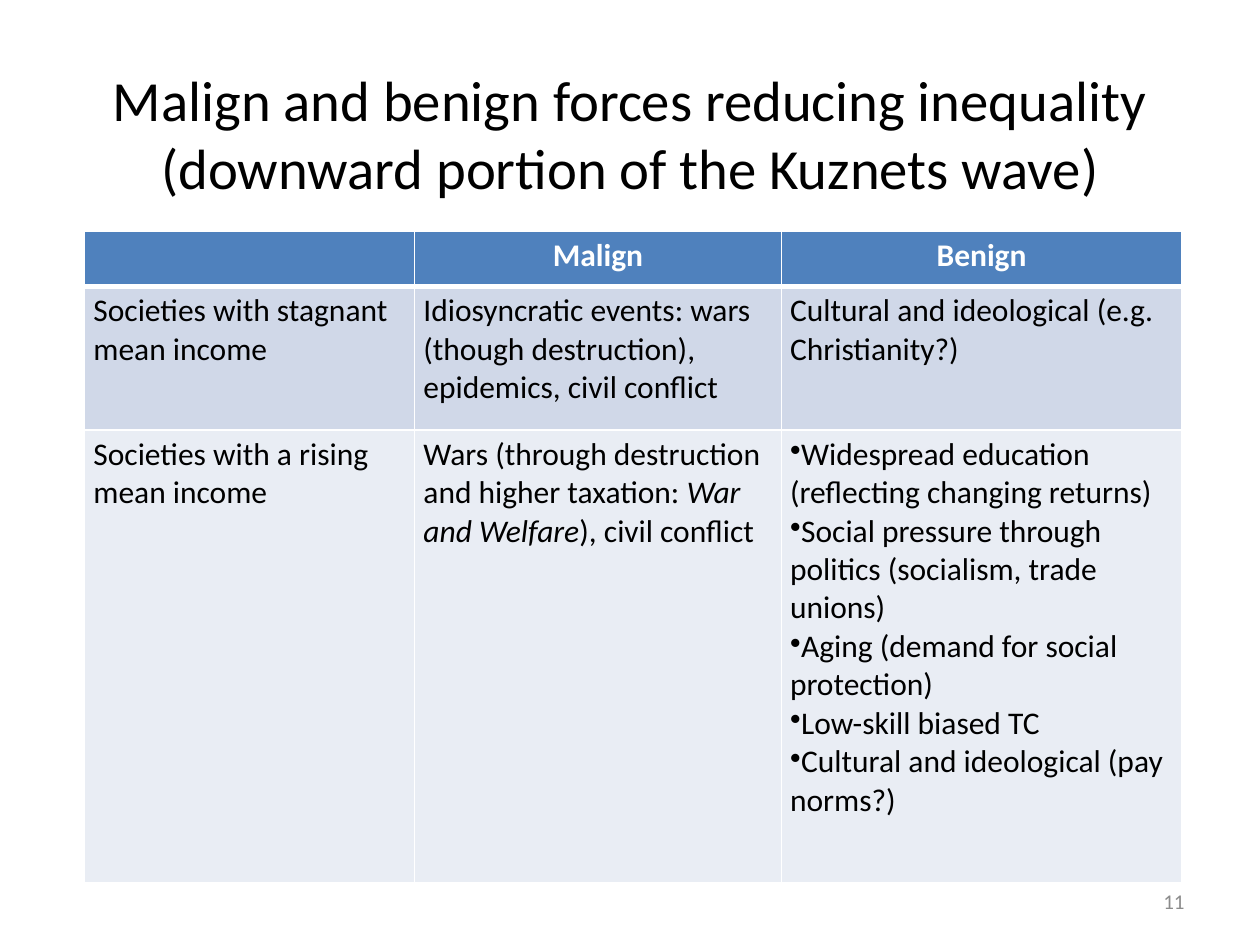
from pptx import Presentation
from pptx.dml.color import RGBColor
from pptx.enum.text import MSO_ANCHOR, PP_ALIGN
from pptx.oxml.ns import qn
from pptx.util import Pt
from lxml import etree

LEFT, CENTER, RIGHT = PP_ALIGN.LEFT, PP_ALIGN.CENTER, PP_ALIGN.RIGHT
MIDDLE = MSO_ANCHOR.MIDDLE

# Content: a cell is a list of paragraphs; a paragraph is a list of (text, italic)
TITLE = "Malign and benign forces reducing inequality (downward portion of the Kuznets wave)"
PAGE_NUMBER = "11"
HEADER = ["", "Malign", "Benign"]
BODY = [
    [
        ["Societies with stagnant mean income"],
        ["Idiosyncratic events: wars (though destruction), epidemics, civil conflict"],
        ["Cultural and ideological (e.g. Christianity?)"],
    ],
    [
        ["Societies with a rising mean income"],
        [[("Wars (through destruction and higher taxation: ", False),
          ("War and Welfare", True),
          ("), civil conflict", False)]],
        ["Widespread education (reflecting changing returns)",
         "Social pressure through politics (socialism, trade unions)",
         "Aging (demand for social protection)",
         "Low-skill biased TC",
         "Cultural and ideological (pay norms?)"],
    ],
]

THEME = {
    "font": "Calibri",
    "title_size": 32.4, "table_size": 18, "number_size": 12,
    "text": "000000", "header_text": "FFFFFF", "number": "8C8C8C",
    "header_fill": "4F81BD", "row_fills": ["D0D8E8", "E9EDF4"],
    "border": "FFFFFF",
}

# Layout in points: left, top, width, height
TITLE_BOX = (24, 22, 672, 108)
NUMBER_BOX = (516, 500.4, 168, 28.8)
TABLE_ORIGIN = (48.4, 132)
COLUMN_WIDTHS = [188.6, 209.5, 229]
ROW_HEIGHTS = [31.7, 82, 258.5]
CELL_INSETS = (5, 3)


def write(frame, paragraphs, size, color="text", align=LEFT, bold=False, bullets=False):
    """Fill a text frame with formatted paragraphs."""
    for index, content in enumerate(paragraphs):
        para = frame.paragraphs[0] if index == 0 else frame.add_paragraph()
        para.alignment = align
        if bullets:
            properties = para._p.get_or_add_pPr()
            properties.set("marL", "0")
            properties.set("indent", "0")
            etree.SubElement(properties, qn("a:buChar")).set("char", "•")
        spans = [(content, False)] if isinstance(content, str) else content
        for text, italic in spans:
            span = para.add_run()
            span.text = text
            font = span.font
            font.name, font.size = THEME["font"], Pt(THEME[size])
            font.bold, font.italic = bold, italic
            font.color.rgb = RGBColor.from_string(THEME[color])


def style_cell(cell, fill, top=1, bottom=1):
    """Set insets, fill and borders of a table cell."""
    cell.margin_left = cell.margin_right = Pt(CELL_INSETS[0])
    cell.margin_top = cell.margin_bottom = Pt(CELL_INSETS[1])
    cell.fill.solid()
    cell.fill.fore_color.rgb = RGBColor.from_string(fill)
    properties = cell._tc.get_or_add_tcPr()
    widths = {"a:lnL": 1, "a:lnR": 1, "a:lnT": top, "a:lnB": bottom}
    for index, (side, width) in enumerate(widths.items()):
        line = etree.Element(qn(side), w=str(Pt(width)))
        solid = etree.SubElement(line, qn("a:solidFill"))
        etree.SubElement(solid, qn("a:srgbClr"), val=THEME["border"])
        properties.insert(index, line)


def place(box, bounds):
    box.left, box.top, box.width, box.height = (Pt(value) for value in bounds)


def add_forces_table(page):
    left, top = TABLE_ORIGIN
    table = page.shapes.add_table(
        len(ROW_HEIGHTS), len(COLUMN_WIDTHS), Pt(left), Pt(top),
        Pt(sum(COLUMN_WIDTHS)), Pt(sum(ROW_HEIGHTS))).table
    for column, width in zip(table.columns, COLUMN_WIDTHS):
        column.width = Pt(width)
    for row, height in zip(table.rows, ROW_HEIGHTS):
        row.height = Pt(height)

    # Header row
    for cell, label in zip(table.rows[0].cells, HEADER):
        style_cell(cell, THEME["header_fill"], bottom=3)
        if label:
            write(cell.text_frame, [label], "table_size", "header_text", CENTER, bold=True)

    # Body rows
    for index, (contents, fill) in enumerate(zip(BODY, THEME["row_fills"])):
        for cell, paragraphs in zip(table.rows[index + 1].cells, contents):
            style_cell(cell, fill, top=3 if index == 0 else 1)
            write(cell.text_frame, paragraphs, "table_size", bullets=len(paragraphs) > 1)


def main():
    deck = Presentation()
    deck.slide_width, deck.slide_height = Pt(720), Pt(540)
    page = deck.slides.add_slide(deck.slide_layouts[5])

    # Title
    title = page.shapes.title
    place(title, TITLE_BOX)
    title.text_frame.vertical_anchor = MIDDLE
    write(title.text_frame, [TITLE], "title_size", align=CENTER)

    add_forces_table(page)

    # Page number
    number = page.shapes.add_textbox(*(Pt(value) for value in NUMBER_BOX))
    number.text_frame.word_wrap = True
    number.text_frame.vertical_anchor = MIDDLE
    write(number.text_frame, [PAGE_NUMBER], "number_size", "number", RIGHT)

    deck.save("out.pptx")


if __name__ == "__main__":
    main()
